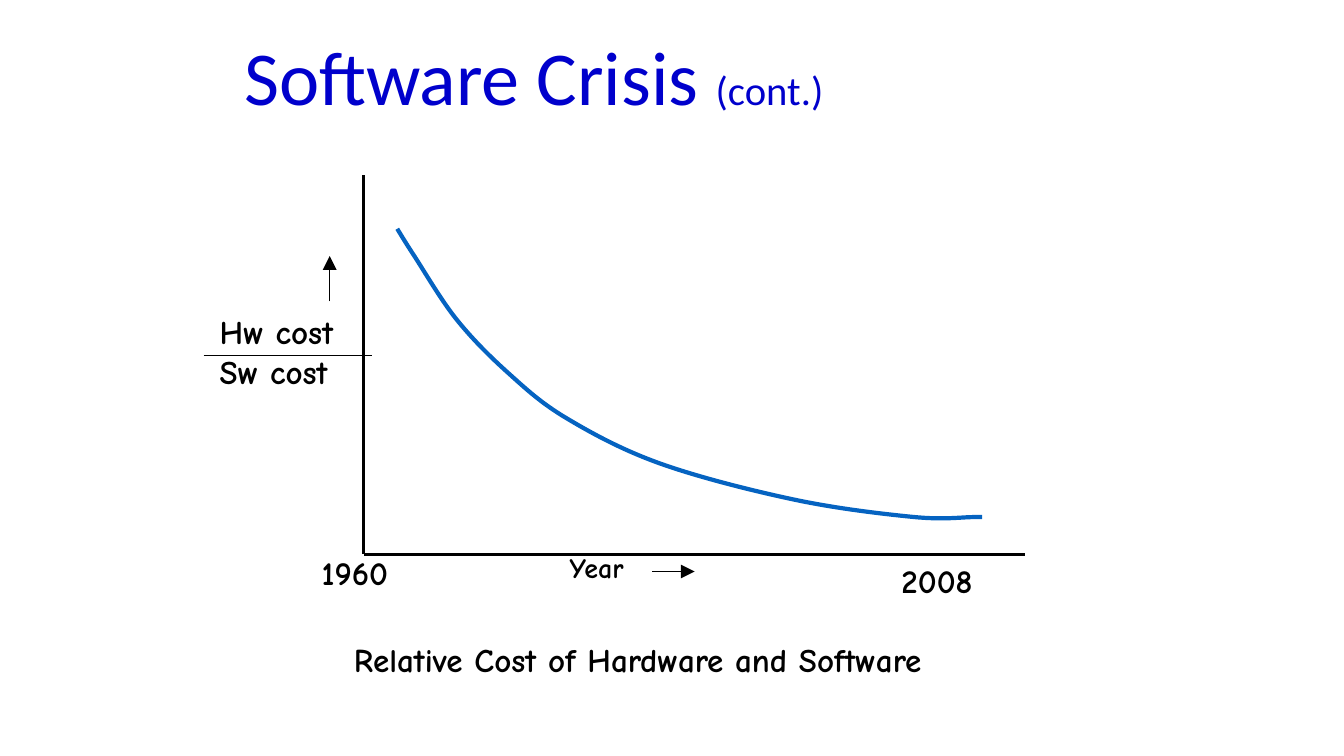
from pptx import Presentation
from pptx.util import Inches, Pt
from pptx.dml.color import RGBColor
from pptx.enum.shapes import MSO_CONNECTOR
from pptx.enum.text import MSO_ANCHOR
from pptx.oxml.ns import qn
from lxml.etree import SubElement

COLORS = {"title": "0000CC", "ink": "000000", "curve": "0563C1"}

prs = Presentation()
prs.slide_width, prs.slide_height = Inches(13.33), Inches(7.5)
s = prs.slides.add_slide(prs.slide_layouts[6])


# Places are percentages of the slide's width and height
def share(x, y):
    return int(prs.slide_width * x / 100), int(prs.slide_height * y / 100)


def add_text(place, paragraphs, spacing, before, fmt, anchor=MSO_ANCHOR.TOP):
    """Each paragraph is a list of (text, size) runs."""
    sp = s.shapes.add_textbox(*share(*place[:2]), *share(*place[2:]))
    tf = sp.text_frame
    frame = {"word_wrap": True, "vertical_anchor": anchor,
             "margin_left": Inches(0.02), "margin_right": Inches(0.02)}
    for name, value in frame.items():
        setattr(tf, name, value)
    for i, runs in enumerate(paragraphs):
        p = tf.paragraphs[0] if i == 0 else tf.add_paragraph()
        p.line_spacing, p.space_before = spacing, Pt(before)
        for text, size in runs:
            r = p.add_run()
            r.text = text
            r.font.size = Pt(size)
            r.font.color.rgb = RGBColor.from_string(COLORS[fmt["color"]])
            for name in ("name", "bold"):
                setattr(r.font, name, fmt[name])


# Title
add_text((18.02, 2.4, 64, 16.53), [[("Software Crisis ", 54.4), ("(cont.)", 29)]],
         0.9, 9.1, {"name": "Calibri", "bold": False, "color": "title"},
         MSO_ANCHOR.MIDDLE)

# Axes
left, base = 27.08, 73.33
axes = [
    ((left, 23.2), (left, base), 2.25, False),
    ((left, base), (76.29, base), 2.25, False),
]
# Fraction bar and direction arrows
marks = [
    ((15.15, 47.07), (27.68, 47.07), 0.75, False),
    ((24.53, 39.87), (24.53, 33.87), 0.75, True),
    ((48.54, 75.6), (51.69, 75.6), 0.75, True),
]
for start, end, width, arrow in axes + marks:
    cx = s.shapes.add_connector(MSO_CONNECTOR.STRAIGHT, *share(*start), *share(*end))
    cx.line.color.rgb = RGBColor.from_string(COLORS["ink"])
    cx.line.width = Pt(width)
    if arrow:
        SubElement(cx.line._get_or_add_ln(), qn("a:tailEnd"),
                   type="triangle", w="lg", len="lg")
    SubElement(cx._element.spPr, qn("a:effectLst"))

# Cost curve through its knots
knots = [(29.56, 30.27), (30.83, 33.87), (33.98, 42.27), (37.81, 49.33),
         (42.16, 55.33), (49.14, 61.33), (59.19, 66.13), (68.04, 68.4),
         (72.47, 68.4), (73.07, 68.4)]
fb = s.shapes.build_freeform(*share(*knots[0]))
fb.add_line_segments([share(*knot) for knot in knots[1:]], close=False)
sp = fb.convert_to_shape()
sp.shadow.inherit = False
sp.fill.background()
sp.line.color.rgb = RGBColor.from_string(COLORS["curve"])
sp.line.width = Pt(3)

# Bend the straight segments into Bezier curves by the Catmull-Rom rule
outline = next(sp._element.iter(qn("a:path")))
pts = [(int(pt.get("x")), int(pt.get("y"))) for pt in outline.iter(qn("a:pt"))]
padded = [pts[0], *pts, pts[-1]]
for segment in outline.findall(qn("a:lnTo")):
    outline.remove(segment)
for a, b, c, d in zip(padded, padded[1:], padded[2:], padded[3:]):
    leave = [q + (r - p) / 6 for p, q, r in zip(a, b, c)]
    arrive = [q - (r - p) / 6 for p, q, r in zip(b, c, d)]
    bezier = SubElement(outline, qn("a:cubicBezTo"))
    for x, y in (leave, arrive, c):
        SubElement(bezier, qn("a:pt"), x=str(round(x)), y=str(round(y)))

# Axis labels and caption
size = 23.6
labels = [
    ((42.24, 72.8, 5.93, 5.73), ["Year"], 20, 4.7),
    ((16.2, 41.33, 13.05, 15.07), ["Hw cost", "Sw cost"], size, 4.7),
    ((26.18, 84.67, 50.79, 6.67), ["Relative Cost of Hardware and Software"], size, 5.6),
    ((23.78, 73.2, 6.83, 6.67), ["1960"], size, 13.7),
    ((66.92, 74.27, 6.9, 6.67), ["2008"], size, 13.7),
]
for place, texts, points, before in labels:
    add_text(place, [[(text, points)] for text in texts], 0.85, before,
             {"name": "Comic Neue", "bold": True, "color": "ink"})

prs.save("out.pptx")
